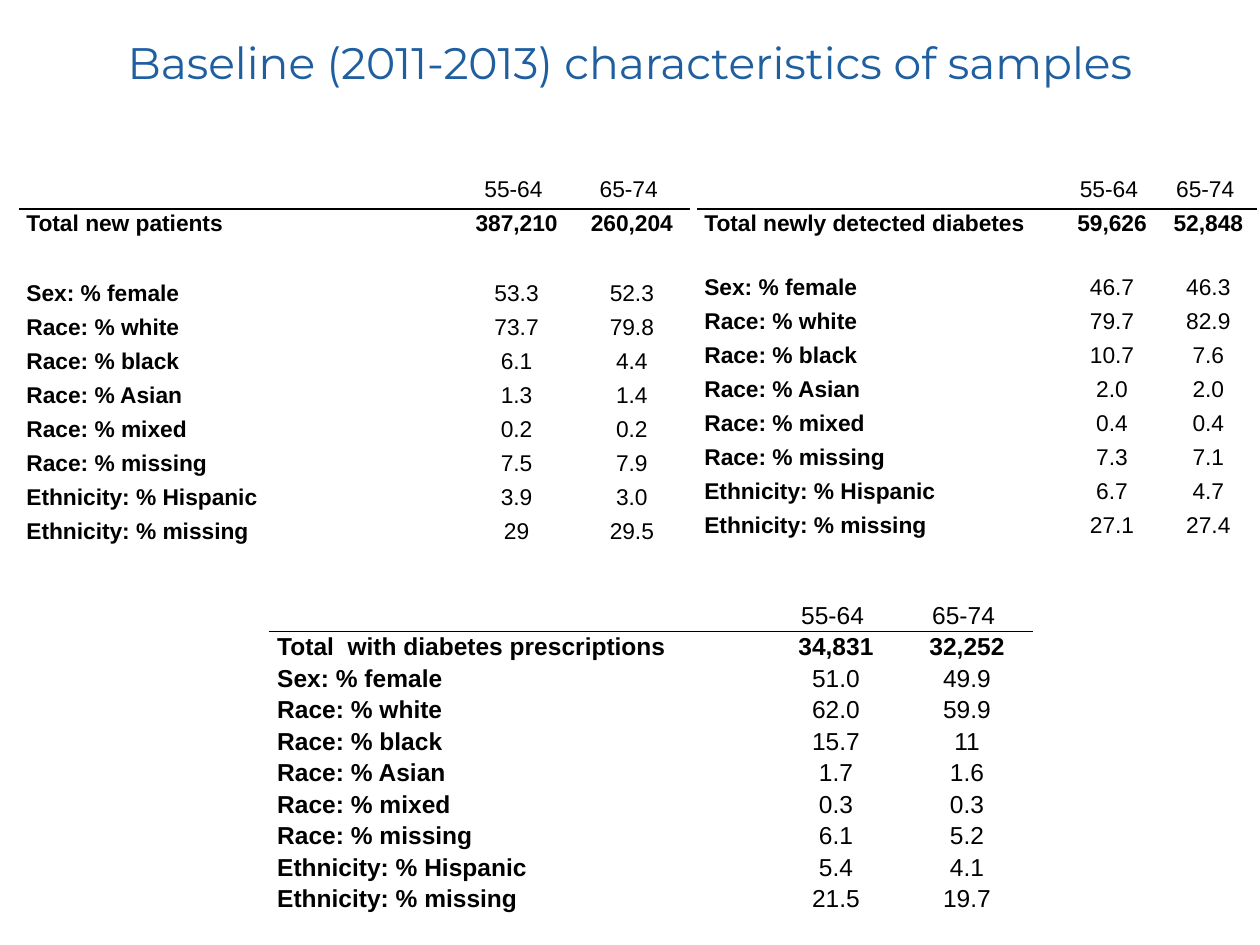
from dataclasses import dataclass

from lxml.etree import SubElement
from pptx import Presentation
from pptx.dml.color import RGBColor
from pptx.enum.text import MSO_ANCHOR, PP_ALIGN
from pptx.oxml.ns import qn
from pptx.util import Inches, Pt


@dataclass
class Theme:
    blue: str = "1F5FA0"
    black: str = "000000"
    white: str = "FFFFFF"
    head: str = "Montserrat"
    body: str = "Arial"
    title: float = 25.2
    small: float = 13
    large: float = 14
    lead: float = 1.07


LABELS = ["Sex: % female", "Race: % white", "Race: % black", "Race: % Asian",
          "Race: % mixed", "Race: % missing", "Ethnicity: % Hispanic",
          "Ethnicity: % missing"]
AGES = ["55-64 ", "65-74 "]


class Deck:
    def __init__(self, theme):
        self.theme = theme
        self.prs = Presentation()
        self.prs.slide_width, self.prs.slide_height = Inches(10), Inches(7.5)
        self.slide = self.prs.slides.add_slide(self.prs.slide_layouts[6])

    def run(self, para, text, size, font, color, bold=False):
        run = para.add_run()
        run.text = text
        run.font.size = Pt(size)
        run.font.name = font
        run.font.bold = bold
        run.font.color.rgb = RGBColor.from_string(color)

    def title(self, text, left, top, width, height):
        box = self.slide.shapes.add_textbox(
            Inches(left), Inches(top), Inches(width), Inches(height))
        frame = box.text_frame
        frame.word_wrap = True
        frame.vertical_anchor = MSO_ANCHOR.MIDDLE
        para = frame.paragraphs[0]
        para.alignment = PP_ALIGN.CENTER
        self.run(para, text, self.theme.title, self.theme.head, self.theme.blue)

    def edge(self, cell, side, color, width=1):
        line = SubElement(cell._tc.get_or_add_tcPr(), qn(f"a:ln{side}"), w=str(Pt(width)))
        fill = SubElement(line, qn("a:solidFill"))
        SubElement(fill, qn("a:srgbClr"), val=color)

    def cell(self, cell, row, col, text, size, pad):
        t = self.theme
        cell.margin_left = cell.margin_right = Inches(pad)
        cell.margin_top = cell.margin_bottom = 0
        cell.vertical_anchor = MSO_ANCHOR.TOP

        # A black rule parts the age row from the totals
        under = row == 1 or (row == 0 and col == 0)
        self.edge(cell, "L", t.white)
        self.edge(cell, "R", t.white)
        self.edge(cell, "T", t.black if row == 2 else t.white)
        self.edge(cell, "B", t.black if under else t.white,
                  3 if row == 0 and col else 1)
        cell.fill.background()

        para = cell.text_frame.paragraphs[0]
        para.line_spacing = t.lead
        para.alignment = PP_ALIGN.CENTER if col else PP_ALIGN.LEFT
        if text:
            bold = row == 2 or (row > 2 and col == 0)
            self.run(para, text, size, t.body, t.black, bold)
        else:
            SubElement(para._p, qn("a:endParaRPr"), sz=str(int(size * 100)))

    def table(self, left, top, cols, rows, size, pad, total, data):
        lines = [[""] * 3, ["", *AGES], total]
        lines += [[name, *pair] for name, pair in zip(LABELS, data)]
        table = self.slide.shapes.add_table(
            len(lines), 3, Inches(left), Inches(top),
            Inches(sum(cols)), Inches(sum(rows))).table
        table.first_row = table.horz_banding = False
        for col, width in zip(table.columns, cols):
            col.width = Inches(width)
        for row, height in zip(table.rows, rows):
            row.height = Inches(height)
        for r, line in enumerate(lines):
            for c, text in enumerate(line):
                self.cell(table.cell(r, c), r, c, text, size, pad)
        table.cell(0, 0).merge(table.cell(1, 0))
        table.cell(0, 1).merge(table.cell(0, 2))

    def save(self):
        self.prs.save("out.pptx")


def main():
    theme = Theme()
    deck = Deck(theme)
    deck.title("Baseline (2011-2013) characteristics of samples", 0, 0.1, 10, 0.78)

    # New patients
    deck.table(0.16, 1.12, [3.48, 0.92, 0.91], [0.27, 0.27, 0.56] + [0.27] * 8,
               theme.small, 0.05, ["Total new patients", "387,210", "260,204"],
               [("53.3", "52.3"), ("73.7", "79.8"), ("6.1", "4.4"), ("1.3", "1.4"),
                ("0.2", "0.2"), ("7.5", "7.9"), ("3.9", "3.0"), ("29", "29.5")])

    # Newly detected diabetes
    deck.table(5.54, 1.13, [2.9, 0.77, 0.76], [0.26, 0.27, 0.51] + [0.27] * 8,
               theme.small, 0.05,
               ["Total newly detected diabetes", "59,626", "52,848"],
               [("46.7", "46.3"), ("79.7", "82.9"), ("10.7", "7.6"), ("2.0", "2.0"),
                ("0.4", "0.4"), ("7.3", "7.1"), ("6.7", "4.7"), ("27.1", "27.4")])

    # Diabetes prescriptions
    deck.table(2.14, 4.53, [3.97, 1.05, 1.03], [0.23] * 11,
               theme.large, 0.06,
               ["Total  with diabetes prescriptions", "34,831", "32,252"],
               [("51.0", "49.9"), ("62.0", "59.9"), ("15.7", "11"), ("1.7", "1.6"),
                ("0.3", "0.3"), ("6.1", "5.2"), ("5.4", "4.1"), ("21.5", "19.7")])
    deck.save()


if __name__ == "__main__":
    main()
